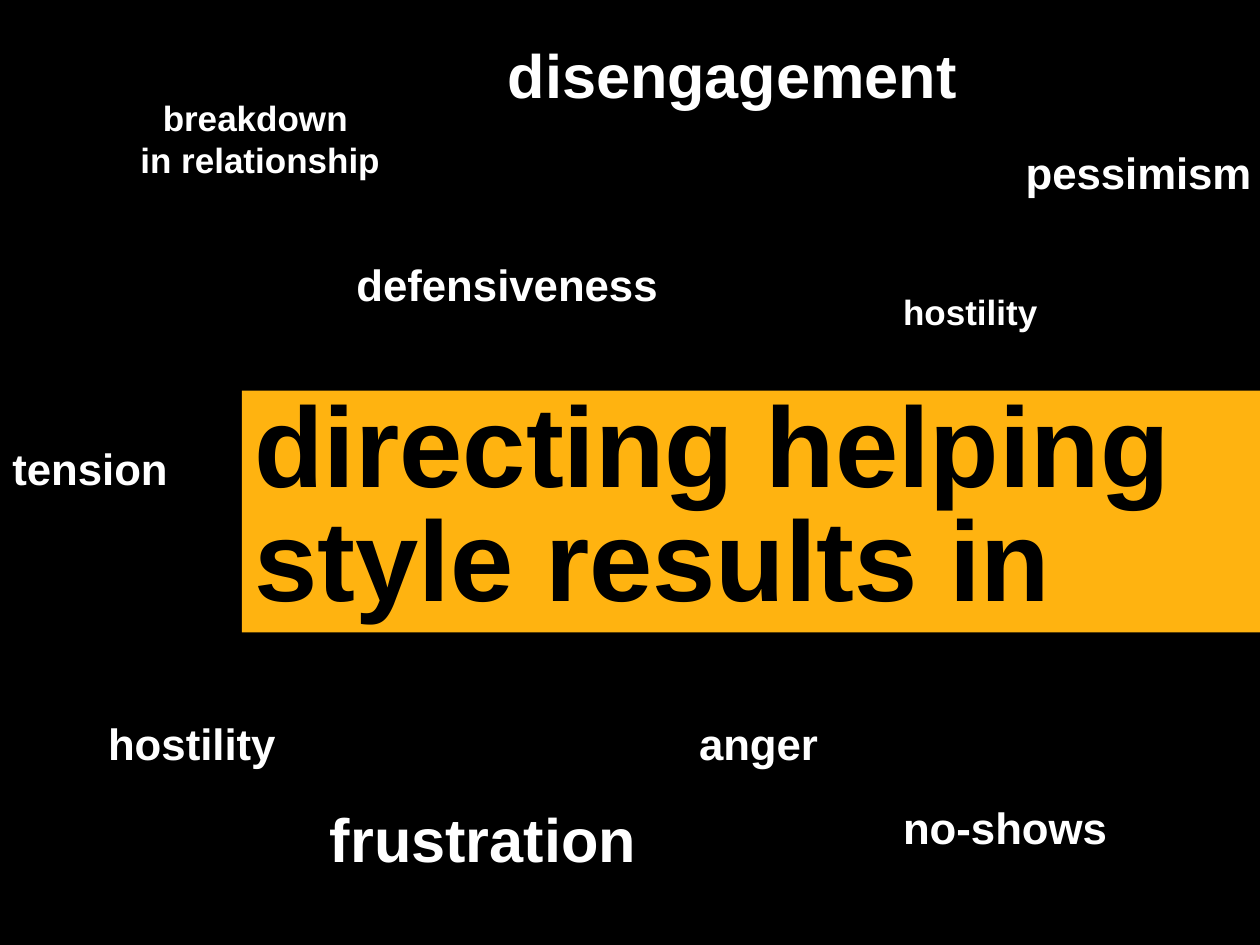
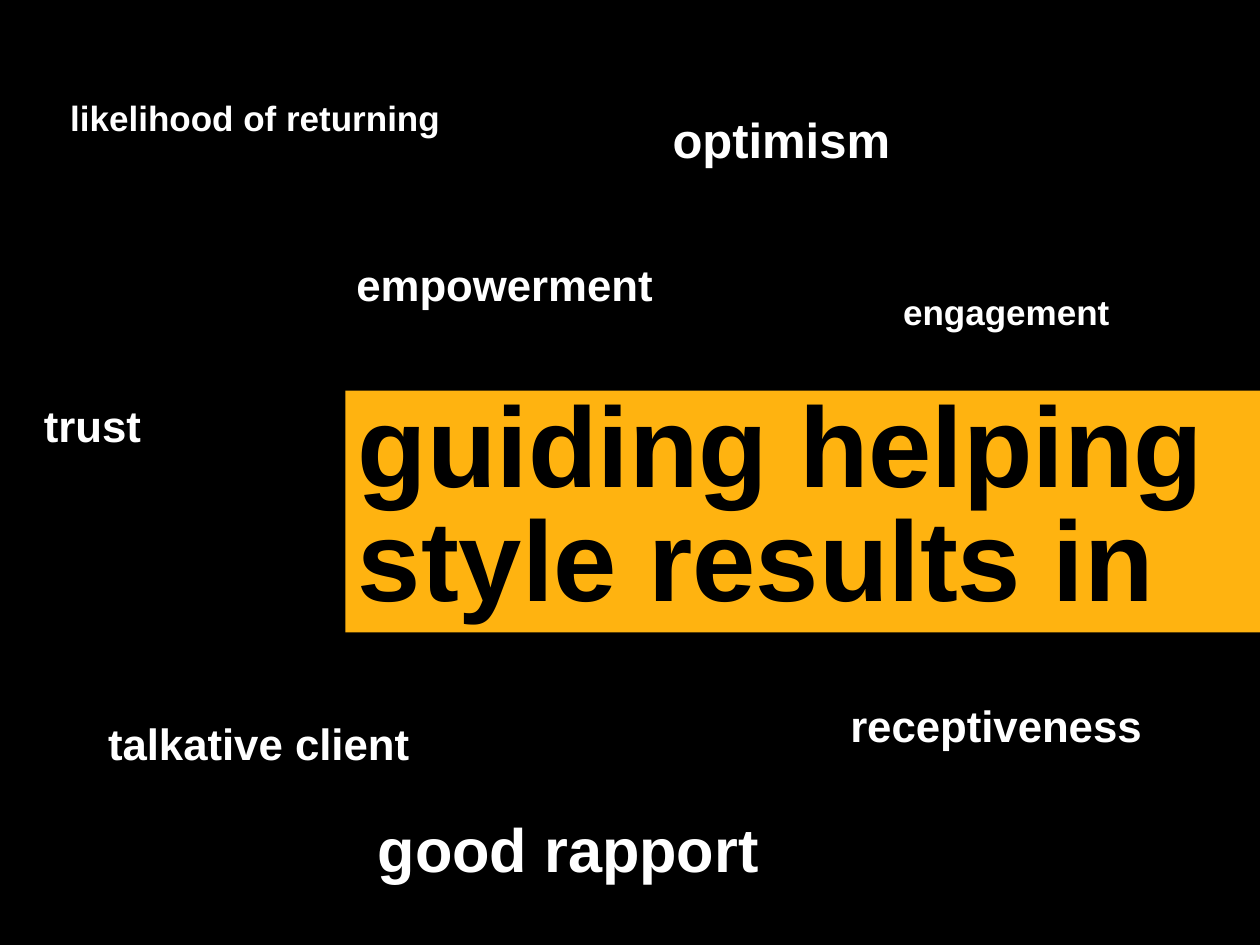
from pptx import Presentation
from pptx.dml.color import RGBColor
from pptx.enum import text
from pptx.util import Pt

# Shared look
FONT = "Arial"
BLACK, WHITE, AMBER = "000000", "FFFFFF", "FFB310"
PAGE_WIDTH, PAGE_HEIGHT = 720, 540
BAND_TOP, BAND_HEIGHT = 223.2, 138.2
TITLE_SIZE = 65
LEFT, CENTER = text.PP_ALIGN.LEFT, text.PP_ALIGN.CENTER


def paint(fill, color):
    fill.solid()
    fill.fore_color.rgb = RGBColor.from_string(color)


def write(shape, lines, size, color=WHITE, align=LEFT, spacing=None):
    """Fill a shape with one bold paragraph per line."""
    frame = shape.text_frame
    frame.word_wrap = True
    frame.auto_size = text.MSO_AUTO_SIZE.SHAPE_TO_FIT_TEXT
    frame.vertical_anchor = text.MSO_ANCHOR.TOP
    frame.text = lines
    for para in frame.paragraphs:
        para.alignment = align
        if spacing:
            para.line_spacing = Pt(spacing)
        for span in para.runs:
            span.font.name = FONT
            span.font.size = Pt(size)
            span.font.bold = True
            span.font.color.rgb = RGBColor.from_string(color)


def add_title_band(page, title, left):
    """Amber band that runs from left to the page's right edge."""
    band = page.shapes.title
    band.left, band.top = Pt(left), Pt(BAND_TOP)
    band.width, band.height = Pt(PAGE_WIDTH - left), Pt(BAND_HEIGHT)
    paint(band.fill, AMBER)
    write(band, title, TITLE_SIZE, color=BLACK, spacing=TITLE_SIZE)


def add_word(page, words, left, top, width, size=25, align=LEFT):
    height = 7.2 + 1.2 * size * len(words.split("\n"))
    box = page.shapes.add_textbox(Pt(left), Pt(top), Pt(width), Pt(height))
    write(box, words, size, align=align)


def add_word_cloud_page(deck, title, band_left, cloud):
    page = deck.slides.add_slide(deck.slide_layouts[5])
    paint(page.background.fill, BLACK)
    add_title_band(page, title, band_left)
    for word in cloud:
        add_word(page, *word)


# Scattered words: text, left, top, width, then size and alignment
DIRECTING = [
    ("defensiveness", 196.6, 144, 272),
    ("frustration", 181.4, 454.3, 211, 35),
    ("hostility", 54.7, 406.1, 211),
    ("disengagement", 283, 18, 433.4, 35),
    ("anger", 392.4, 406.1, 211),
    ("pessimism", 579, 79.9, 211),
    ("breakdown \nin relationship", -36, 51.8, 369.4, 20, CENTER),
    ("tension", 0, 249.1, 158.4),
    ("hostility", 509, 162.7, 155.5, 20),
    ("no-shows", 509, 454.3, 211),
]
GUIDING = [
    ("empowerment", 196.6, 144, 272),
    ("good rapport", 208.8, 460.1, 277.2, 35),
    ("talkative client", 54.7, 406.1, 211),
    ("receptiveness", 478.8, 396, 211),
    ("optimism", 377.3, 59, 211, 28),
    ("likelihood of returning ", -36, 51.8, 369.4, 20, CENTER),
    ("engagement", 509, 162.7, 155.5, 20),
    ("trust", 18, 224.6, 211),
]


def main():
    deck = Presentation()
    deck.slide_width, deck.slide_height = Pt(PAGE_WIDTH), Pt(PAGE_HEIGHT)
    add_word_cloud_page(deck, "directing helping style results in", 138.2, DIRECTING)
    add_word_cloud_page(deck, "guiding helping style results in", 197.3, GUIDING)
    deck.save("out.pptx")


if __name__ == "__main__":
    main()
